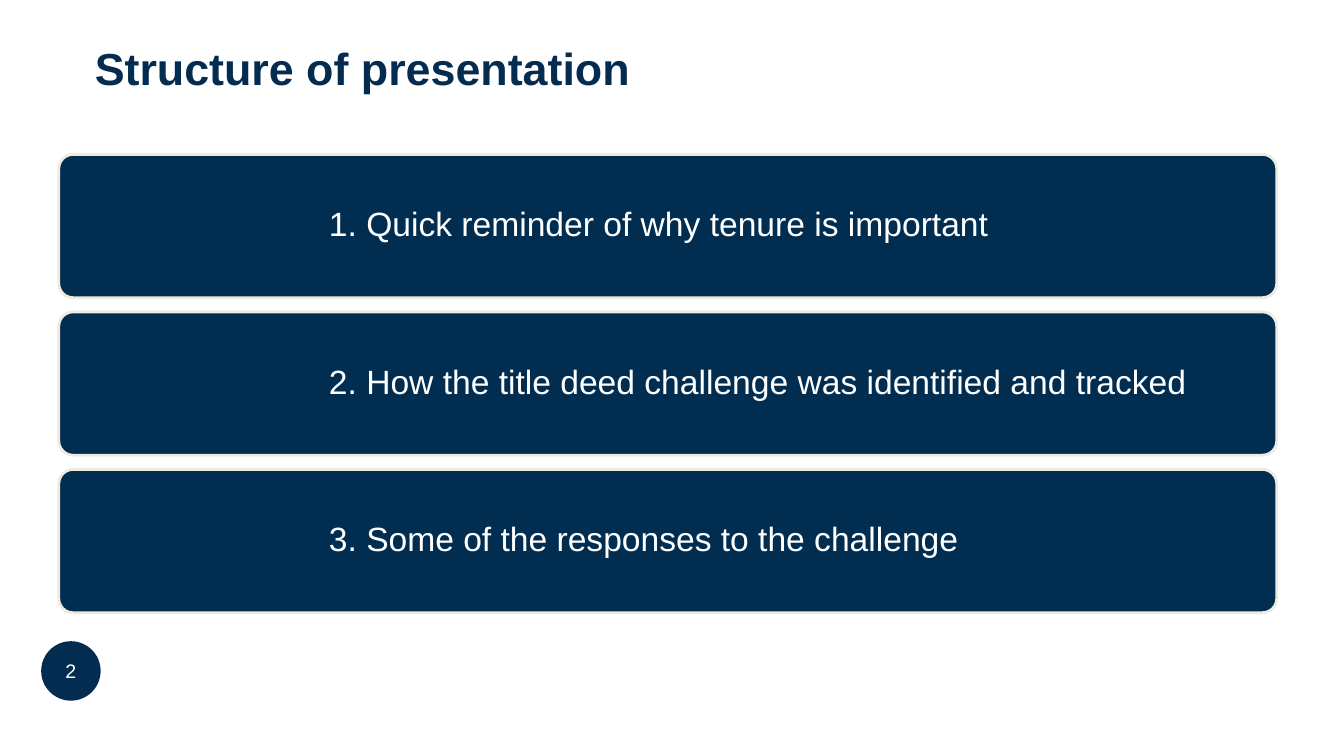
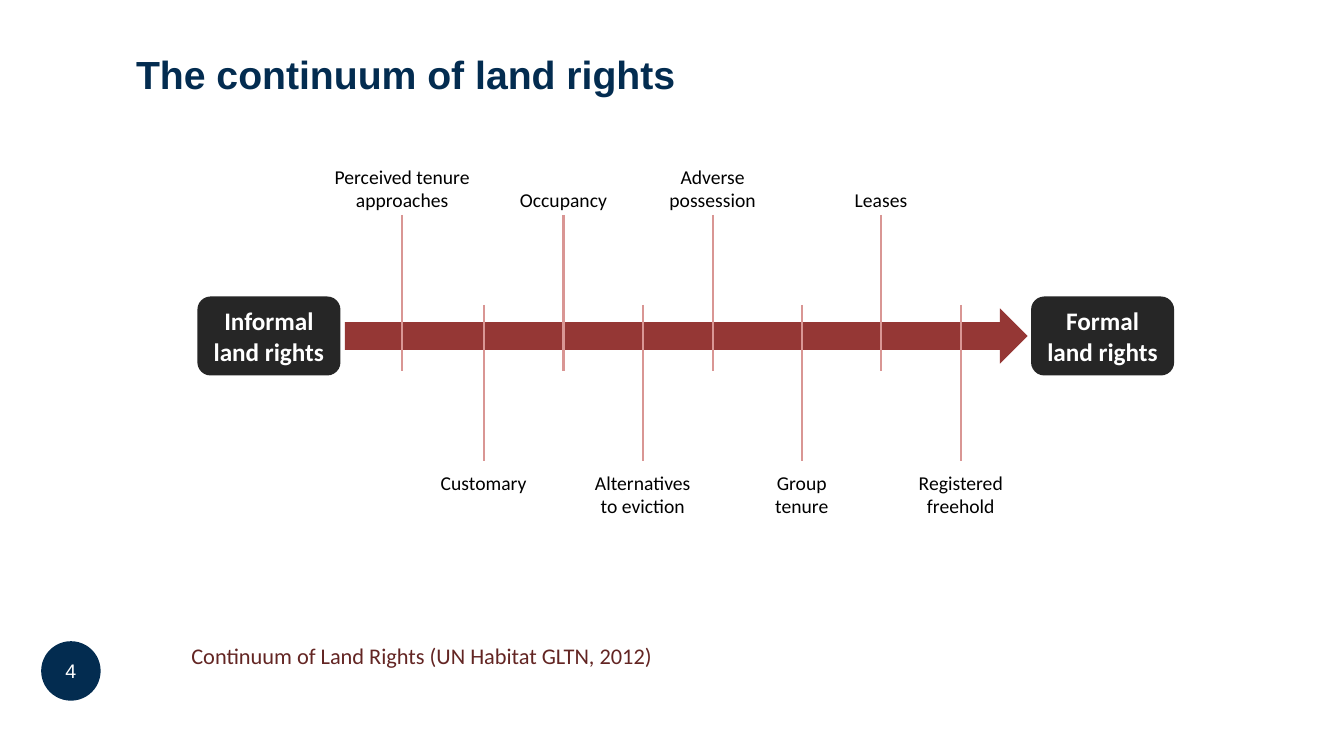
from dataclasses import dataclass

from lxml.etree import SubElement
from pptx import Presentation
from pptx.dml.color import RGBColor
from pptx.enum.shapes import MSO_CONNECTOR, MSO_SHAPE
from pptx.enum.text import MSO_ANCHOR, MSO_AUTO_SIZE, PP_ALIGN
from pptx.oxml.ns import qn
from pptx.util import Pt


# Content
AGENDA = {
    "title": "Structure of presentation",
    "number": "2",
    "items": [
        "1. Quick reminder of why tenure is important",
        "2. How the title deed challenge was identified and tracked",
        "3. Some of the responses to the challenge",
    ],
}
CONTINUUM = {
    "title": "The continuum of land rights",
    "number": "4",
    "ends": [("Informal land rights", 141), ("Formal land rights", 736.5)],
    # Label lines and the x of each marker
    "above": [
        (["Perceived tenure", "approaches"], 287.3),
        (["Occupancy"], 402.5),
        (["Adverse", "possession"], 509),
        (["Leases"], 629.3),
    ],
    # Labels at an even pitch
    "below": [
        ["Customary"],
        ["Alternatives", "to eviction"],
        ["Group", "tenure"],
        ["Registered", "freehold"],
    ],
    "source": "Continuum of Land Rights (UN Habitat GLTN, 2012)",
}


@dataclass(frozen=True)
class Theme:
    navy: str = "032C50"
    panel: str = "012D50"
    cream: str = "EEECE1"
    white: str = "FFFFFF"
    black: str = "000000"
    charcoal: str = "262626"
    brick: str = "953735"
    rose: str = "D99694"
    maroon: str = "632523"
    heading_font: str = "Arial"
    body_font: str = "Calibri"
    title_large: int = 32
    title_small: int = 28
    item_size: int = 24
    end_size: int = 18
    source_size: int = 16
    small_size: int = 14


THEME = Theme()


def color(code):
    return RGBColor.from_string(code)


def write(frame, lines, size, ink, font=THEME.body_font, bold=False,
          align=PP_ALIGN.CENTER, anchor=MSO_ANCHOR.MIDDLE, wrap=True,
          insets=(7.2, 3.6, 7.2, 3.6)):
    """Fill a text frame with one paragraph per line."""
    frame.word_wrap = wrap
    frame.auto_size = MSO_AUTO_SIZE.NONE
    frame.vertical_anchor = anchor
    (frame.margin_left, frame.margin_top,
     frame.margin_right, frame.margin_bottom) = map(Pt, insets)
    for index, line in enumerate(lines):
        para = frame.paragraphs[0] if index == 0 else frame.add_paragraph()
        para.alignment = align
        span = para.add_run()
        span.text = line
        span.font.name = font
        span.font.size = Pt(size)
        span.font.bold = bold
        span.font.color.rgb = color(ink)


def add_block(page, kind, left, top, width, height, fill, line=None):
    block = page.shapes.add_shape(kind, Pt(left), Pt(top), Pt(width), Pt(height))
    block.shadow.inherit = False
    block.fill.solid()
    block.fill.fore_color.rgb = color(fill)
    if line:
        block.line.color.rgb = color(line)
        block.line.width = Pt(2)
    else:
        block.line.fill.background()
    return block


def add_text(page, left, top, width, height, lines, size, ink, **style):
    box = page.shapes.add_textbox(Pt(left), Pt(top), Pt(width), Pt(height))
    write(box.text_frame, lines, size, ink, **style)


def add_page(deck, content, left, top, width, size):
    """Add a slide with the shared title style and number badge."""
    page = deck.slides.add_slide(deck.slide_layouts[5])
    title = page.shapes.title
    title.left, title.top = Pt(left), Pt(top)
    title.width, title.height = Pt(width), Pt(76.3)
    write(title.text_frame, [content["title"]], size, THEME.navy,
          font=THEME.heading_font, bold=True, align=PP_ALIGN.LEFT)
    badge = add_block(page, MSO_SHAPE.OVAL, 29.4, 458, 42.5, 42.5, THEME.navy)
    write(badge.text_frame, [content["number"]], THEME.small_size, THEME.white,
          font=THEME.heading_font, insets=(6, 0, 6, 0))
    return page


def add_marker(page, x, top, lines, label_above):
    """Draw a vertical marker with its label at the outer end."""
    length, label_width, label_height = 111.5, 104, 41
    bottom = top + length
    marker = page.shapes.add_connector(
        MSO_CONNECTOR.STRAIGHT, Pt(x), Pt(top), Pt(x), Pt(bottom))
    marker.line.color.rgb = color(THEME.rose)
    marker.line.width = Pt(1.5)
    SubElement(marker.line._get_or_add_ln().getparent(), qn("a:effectLst"))
    label_top = top + 1.2 - label_height if label_above else bottom + 3.3
    add_text(page, x - label_width / 2, label_top, label_width, label_height,
             lines, THEME.small_size, THEME.black, wrap=False,
             insets=(0, 3.6, 0, 3.6),
             anchor=MSO_ANCHOR.BOTTOM if label_above else MSO_ANCHOR.TOP)


def build_agenda(deck):
    page = add_page(deck, AGENDA, 60.5, 10, 845, THEME.title_large)
    first_top, pitch, height = 110.3, 112.5, 102.4
    for index, item in enumerate(AGENDA["items"]):
        panel = add_block(page, MSO_SHAPE.ROUNDED_RECTANGLE, 42,
                          first_top + index * pitch, 870, height,
                          THEME.panel, THEME.cream)
        panel.adjustments[0] = 0.1
        write(panel.text_frame, [item], THEME.item_size, THEME.white,
              font=THEME.heading_font, align=PP_ALIGN.LEFT,
              insets=(190, 6, 6, 6))
        panel.text_frame.paragraphs[0].line_spacing = 0.9


def build_continuum(deck):
    page = add_page(deck, CONTINUUM, 90, 14.5, 816, THEME.title_small)
    add_text(page, 129.6, 455, 348, 26.6, [CONTINUUM["source"]],
             THEME.source_size, THEME.maroon, align=PP_ALIGN.LEFT,
             anchor=MSO_ANCHOR.TOP, wrap=False)

    # Arrow and its two ends share one axis
    axis, arrow_height, end_height = 240, 39.6, 56.4
    add_block(page, MSO_SHAPE.RIGHT_ARROW, 246.3, axis - arrow_height / 2,
              487.7, arrow_height, THEME.brick)
    for label, left in CONTINUUM["ends"]:
        end = add_block(page, MSO_SHAPE.ROUNDED_RECTANGLE, left,
                        axis - end_height / 2, 102.2, end_height, THEME.charcoal)
        write(end.text_frame, [label], THEME.end_size, THEME.white, bold=True,
              insets=(4, 3.6, 4, 3.6))

    # Markers above and below the axis
    for lines, x in CONTINUUM["above"]:
        add_marker(page, x, 153.5, lines, label_above=True)
    first_x, pitch = 345.5, 113.6
    for index, lines in enumerate(CONTINUUM["below"]):
        add_marker(page, first_x + index * pitch, 217.8, lines, label_above=False)


def main():
    deck = Presentation()
    deck.slide_width, deck.slide_height = Pt(960), Pt(540)
    build_agenda(deck)
    build_continuum(deck)
    deck.save("out.pptx")


if __name__ == "__main__":
    main()
